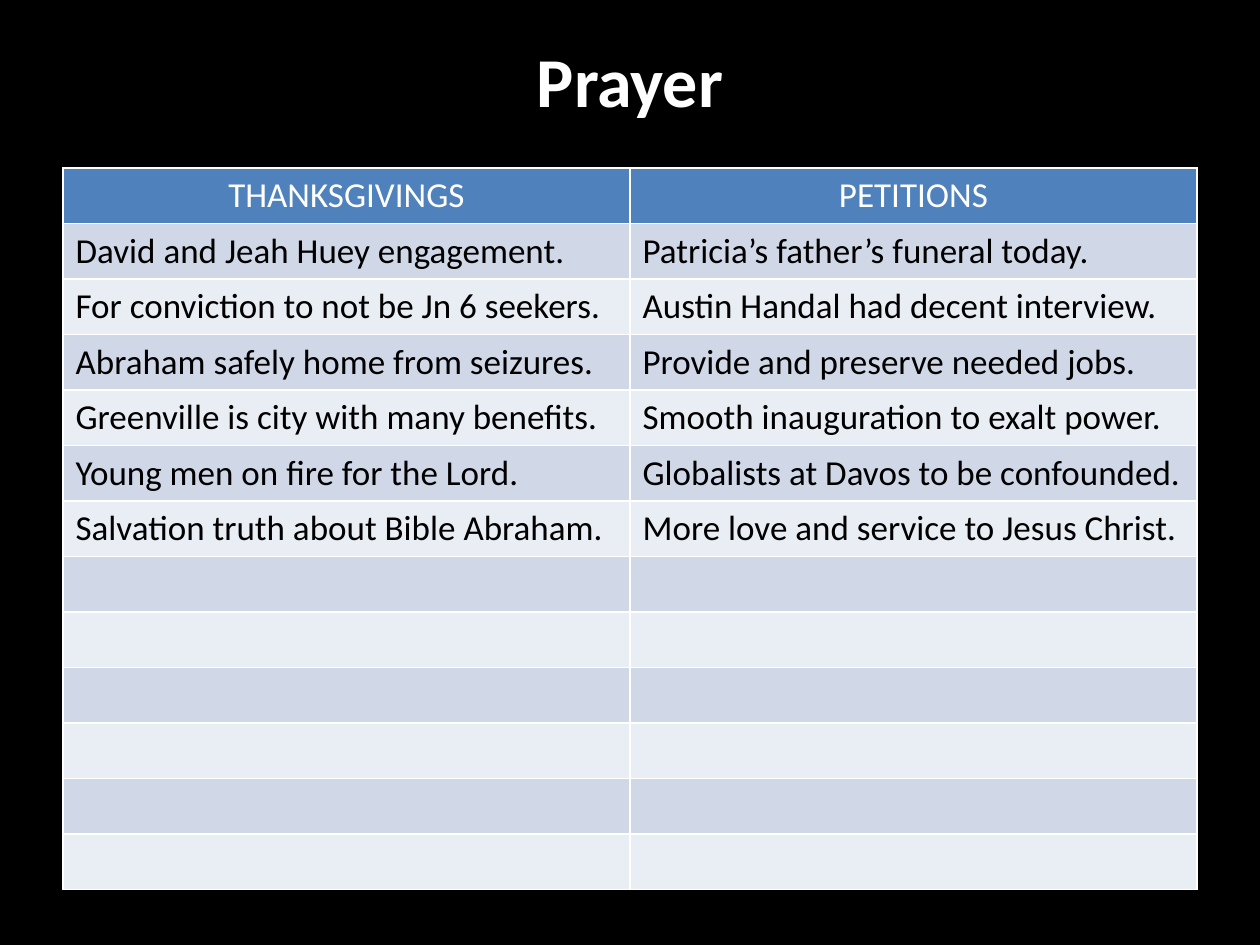
"""Build a prayer slide with a table of thanksgivings and petitions."""
from lxml import etree
from pptx import Presentation
from pptx import util as u
from pptx.dml.color import RGBColor
from pptx.enum import text
from pptx.oxml import ns

PX = u.Inches(1) / 126
BLACK = RGBColor(0x00, 0x00, 0x00)
WHITE = RGBColor(0xFF, 0xFF, 0xFF)
HEADER_BLUE = RGBColor(0x4F, 0x81, 0xBD)
BANDS = [RGBColor(0xE9, 0xED, 0xF4), RGBColor(0xD0, 0xD8, 0xE8)]
ROW_COUNT = 13
PRAYERS = [
    ("THANKSGIVINGS", "PETITIONS"),
    ("David and Jeah Huey engagement.", "Patricia’s father’s funeral today."),
    ("For conviction to not be Jn 6 seekers.", "Austin Handal had decent interview."),
    ("Abraham safely home from seizures.", "Provide and preserve needed jobs."),
    ("Greenville is city with many benefits.", "Smooth inauguration to exalt power."),
    ("Young men on fire for the Lord.", "Globalists at Davos to be confounded."),
    ("Salvation truth about Bible Abraham.", "More love and service to Jesus Christ."),
]


def px(length):
    return u.Emu(round(length * PX))


def write(paragraph, words, align, **font_format):
    paragraph.alignment = align
    run = paragraph.add_run()
    run.text = words
    run.font.name = "Calibri"
    run.font.color.rgb = font_format.pop("color")
    for key, value in font_format.items():
        setattr(run.font, key, value)


deck = Presentation()
deck.slide_width, deck.slide_height = px(1260), px(945)
slide = deck.slides.add_slide(deck.slide_layouts[5])
slide.background.fill.solid()
slide.background.fill.fore_color.rgb = BLACK

heading = slide.shapes.title
heading_box = {"left": 63, "top": 22, "width": 1134, "height": 116}
for side, length in heading_box.items():
    setattr(heading, side, px(length))
heading.text_frame.vertical_anchor = text.MSO_ANCHOR.MIDDLE
write(heading.text_frame.paragraphs[0], "Prayer", text.PP_ALIGN.CENTER,
      size=u.Pt(40), bold=True, color=WHITE)

prayer_list = slide.shapes.add_table(
    ROW_COUNT, 2, px(63), px(168), px(1134), px(721)).table
prayer_list.first_row = prayer_list.horz_banding = False

for row_index in range(ROW_COUNT):
    is_header = row_index == 0
    for column_index in range(2):
        cell = prayer_list.cell(row_index, column_index)
        properties = cell._tc.get_or_add_tcPr()
        for edge in ("lnL", "lnR", "lnT", "lnB"):
            line = etree.SubElement(properties, ns.qn(f"a:{edge}"), w=str(u.Pt(1)))
            fill = etree.SubElement(line, ns.qn("a:solidFill"))
            etree.SubElement(fill, ns.qn("a:srgbClr"), val=str(WHITE))
        cell.fill.solid()
        cell.fill.fore_color.rgb = HEADER_BLUE if is_header else BANDS[row_index % 2]
        if row_index < len(PRAYERS):
            write(cell.text_frame.paragraphs[0], PRAYERS[row_index][column_index],
                  text.PP_ALIGN.CENTER if is_header else text.PP_ALIGN.LEFT,
                  size=u.Pt(20), bold=False, color=WHITE if is_header else BLACK)

deck.save("out.pptx")
